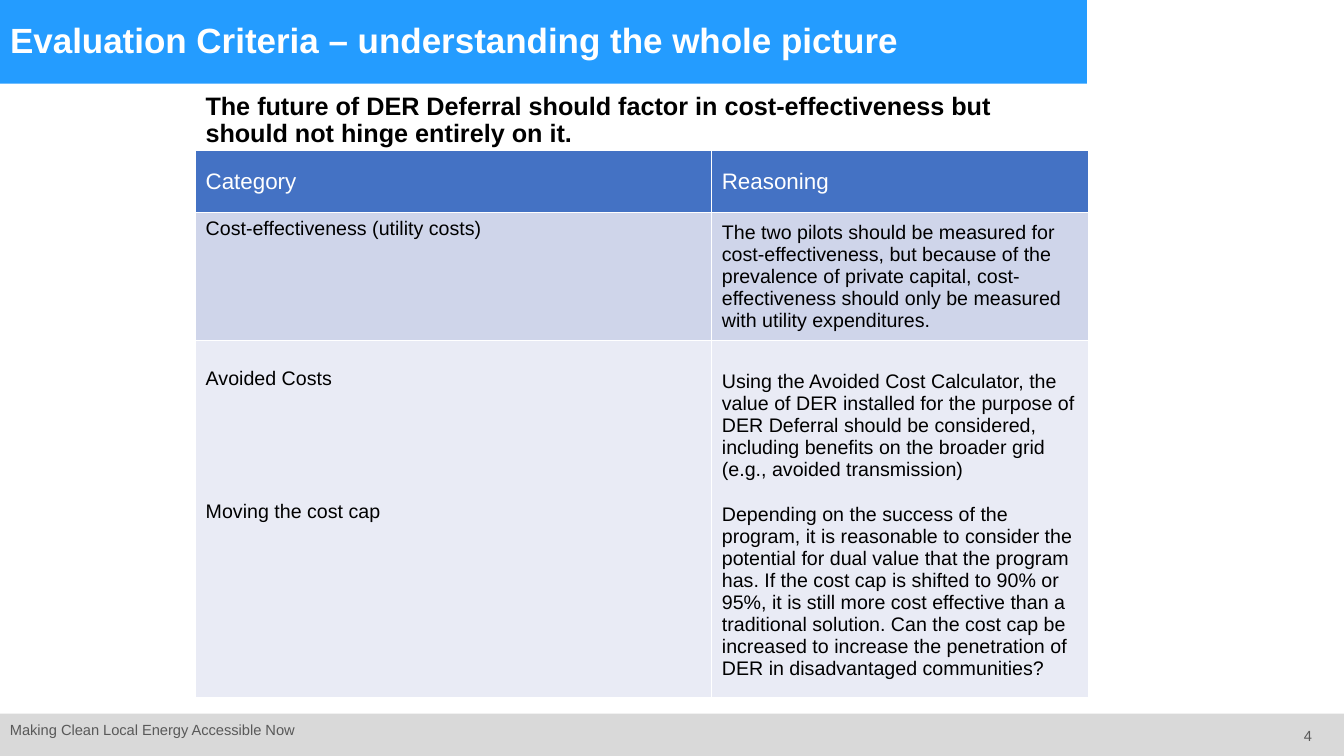
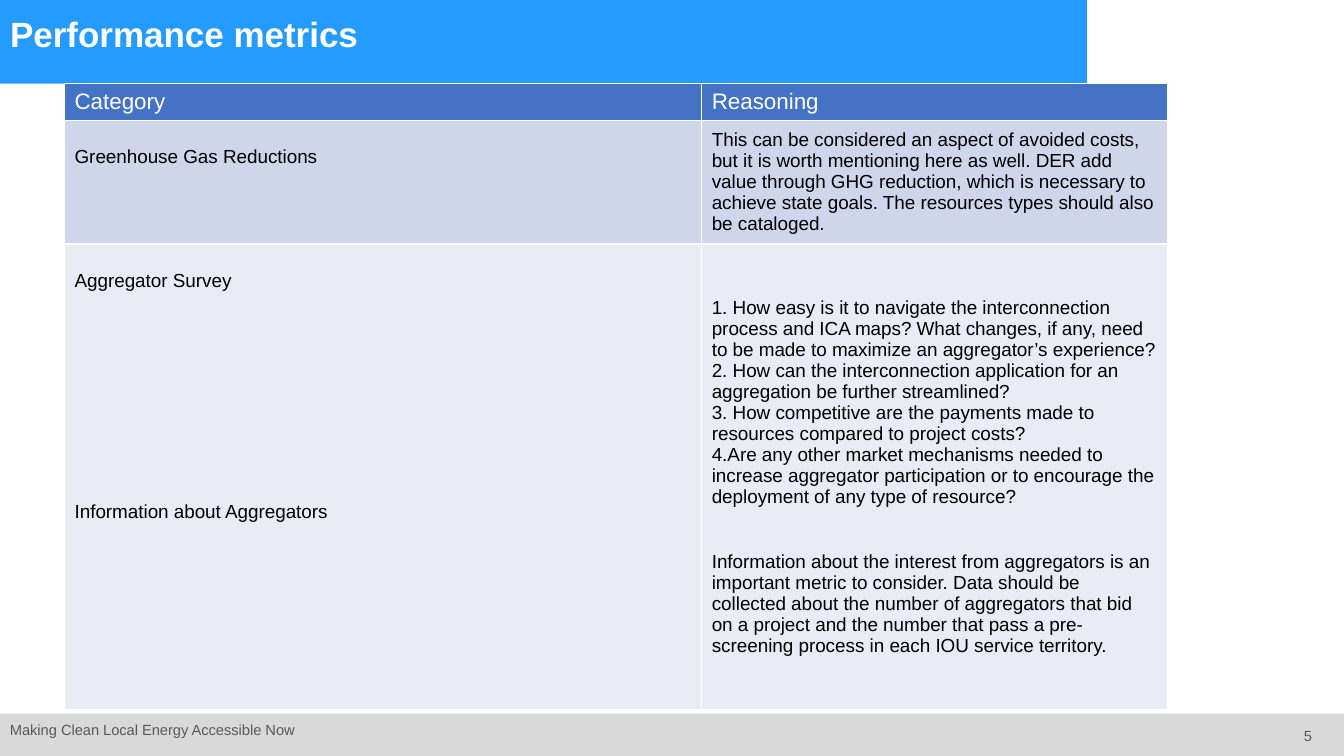
"""Build two slides on evaluation criteria and performance metrics."""
from pptx import Presentation
from pptx.dml.color import RGBColor
from pptx.enum.shapes import MSO_SHAPE
from pptx.enum.text import MSO_ANCHOR, PP_ALIGN
from pptx.util import Inches, Pt

FONT = "Arial"
WHITE, BLACK, GRAY_TEXT = "FFFFFF", "000000", "595959"
TITLE_BAND, FOOTER_BAND = "249CFF", "D9D9D9"
ROW_FILLS = ["4472C4", "CFD5EA", "E9EBF5"]
FOOTER = "Making Clean Local Energy Accessible Now"
HEADINGS = ("Category", "Reasoning")
INSET = 0.05

SLIDES = [
    {
        "number": 4,
        "title": "Evaluation Criteria – understanding the whole picture",
        "title_height": 0.83,
        "lead": "The future of DER Deferral should factor in cost-effectiveness but "
                "should not hinge entirely on it.",
        "position": (1.94, 1.49),
        "columns": (5.12, 3.74),
        "rows": (0.62, 1.19, 3.54),
        "size": 14,
        "cells": [
            [
                {"text": ["Cost-effectiveness (utility costs)"]},
                {"text": [
                    "The two pilots should be measured for cost-effectiveness, but because "
                    "of the prevalence of private capital, cost-effectiveness should only "
                    "be measured with utility expenditures."]},
            ],
            [
                {"text": ["Avoided Costs", "Moving the cost cap"], "gaps": {1: 79}, "top": 0.27},
                {"text": [
                    "Using the Avoided Cost Calculator, the value of DER installed for the "
                    "purpose of DER Deferral should be considered, including benefits on "
                    "the broader grid (e.g., avoided transmission)",
                    "Depending on the success of the program, it is reasonable to consider "
                    "the potential for dual value that the program has. If the cost cap is "
                    "shifted to 90% or 95%, it is still more cost effective than a "
                    "traditional solution. Can the cost cap be increased to increase the "
                    "penetration of DER in disadvantaged communities?"],
                 "gaps": {1: 16}, "top": 0.18},
            ],
        ],
    },
    {
        "number": 5,
        "title": "Performance metrics",
        "title_height": 0.71,
        "position": (0.64, 0.83),
        "columns": (6.32, 4.62),
        "rows": (0.35, 1.21, 4.62),
        "size": 13.5,
        "cells": [
            [
                {"text": ["Greenhouse Gas Reductions"], "top": 0.26},
                {"text": [
                    "This can be considered an aspect of avoided costs, but it is worth "
                    "mentioning here as well. DER add value through GHG reduction, which is "
                    "necessary to achieve state goals. The resources types should also be "
                    "cataloged."]},
            ],
            [
                {"text": ["Aggregator Survey", "Information about Aggregators"],
                 "gaps": {1: 150}, "top": 0.26},
                {"text": [
                    "1. How easy is it to navigate the interconnection process and ICA maps? "
                    "What changes, if any, need to be made to maximize an aggregator’s "
                    "experience?",
                    "2. How can the interconnection application for an aggregation be "
                    "further streamlined?",
                    "3. How competitive are the payments made to resources compared to "
                    "project costs?",
                    "4.Are any other market mechanisms needed to increase aggregator "
                    "participation or to encourage the deployment of any type of resource?",
                    "Information about the interest from aggregators is an important metric "
                    "to consider. Data should be collected about the number of aggregators "
                    "that bid on a project and the number that pass a pre-screening process "
                    "in each IOU service territory."],
                 "gaps": {4: 31}},
            ],
        ],
    },
]


def color(value):
    """Turn a hex string into a colour."""
    return RGBColor.from_string(value)


def write_text(frame, paragraphs, size, fill, bold=False, align=PP_ALIGN.LEFT,
               line_spacing=None, gaps=None):
    """Write formatted paragraphs, with gaps in points before those indexed."""
    gaps = gaps or {}
    for index, text in enumerate(paragraphs):
        paragraph = frame.add_paragraph() if index else frame.paragraphs[0]
        paragraph.text = text
        paragraph.alignment = align
        if line_spacing:
            paragraph.line_spacing = line_spacing
        if index in gaps:
            paragraph.space_before = Pt(gaps[index])
        font = paragraph.font
        font.name, font.size, font.bold = FONT, Pt(size), bold
        font.color.rgb = color(fill)


def add_band(slide, top, width, height, fill):
    """Add a plain band from the left edge."""
    shape = slide.shapes.add_shape(
        MSO_SHAPE.RECTANGLE, 0, Inches(top), Inches(width), Inches(height))
    shape.shadow.inherit = False
    shape.fill.solid()
    shape.fill.fore_color.rgb = color(fill)
    shape.line.fill.background()
    return shape


def add_label(slide, box, text, size, fill, **formatting):
    """Add a wrapped text box at left, top, width, height."""
    frame = slide.shapes.add_textbox(*map(Inches, box)).text_frame
    frame.word_wrap = True
    write_text(frame, [text], size, fill, **formatting)


def add_frame(slide, content):
    """Add the bands, the title, the footer and the slide number."""
    title = slide.shapes.title
    bands = [add_band(slide, 7.08, 13.33, 0.42, FOOTER_BAND),
             add_band(slide, 0, 10.78, 0.83, TITLE_BAND)]
    for band in bands:
        title.element.addprevious(band.element)
    title.left, title.top = Inches(0), Inches(0)
    title.width, title.height = Inches(10.67), Inches(content["title_height"])
    title.text_frame.vertical_anchor = MSO_ANCHOR.MIDDLE
    write_text(title.text_frame, [content["title"]], 25, WHITE, bold=True, line_spacing=0.9)
    add_label(slide, (0, 7.1, 6.89, 0.28), FOOTER, 10.5, GRAY_TEXT)
    add_label(slide, (12.27, 7.16, 0.84, 0.4), str(content["number"]), 10.5, GRAY_TEXT,
              align=PP_ALIGN.RIGHT)


def add_reasoning_table(slide, content):
    """Add the table of categories and reasons."""
    columns, rows = content["columns"], content["rows"]
    left, top = content["position"]
    table = slide.shapes.add_table(
        len(rows), len(columns), Inches(left), Inches(top),
        Inches(sum(columns)), Inches(sum(rows))).table
    for column, width in zip(table.columns, columns):
        column.width = Inches(width)
    header = [{"text": [heading]} for heading in HEADINGS]
    for row_index, entries in enumerate([header] + content["cells"]):
        table.rows[row_index].height = Inches(rows[row_index])
        is_header = row_index == 0
        for column_index, entry in enumerate(entries):
            cell = table.cell(row_index, column_index)
            cell.fill.solid()
            cell.fill.fore_color.rgb = color(ROW_FILLS[row_index])
            cell.margin_top = Inches(entry.get("top", INSET))
            centered = is_header or column_index == 1
            cell.vertical_anchor = MSO_ANCHOR.MIDDLE if centered else MSO_ANCHOR.TOP
            write_text(cell.text_frame, entry["text"],
                       16 if is_header else content["size"],
                       WHITE if is_header else BLACK, gaps=entry.get("gaps"))


def main():
    """Build and save the presentation."""
    presentation = Presentation()
    presentation.slide_width, presentation.slide_height = Inches(13.33), Inches(7.5)
    for content in SLIDES:
        slide = presentation.slides.add_slide(presentation.slide_layouts[5])
        add_frame(slide, content)
        if "lead" in content:
            add_label(slide, (1.94, 0.88, 8.57, 0.56), content["lead"], 18, BLACK,
                      bold=True, line_spacing=0.9)
        add_reasoning_table(slide, content)
    presentation.save("out.pptx")


if __name__ == "__main__":
    main()
